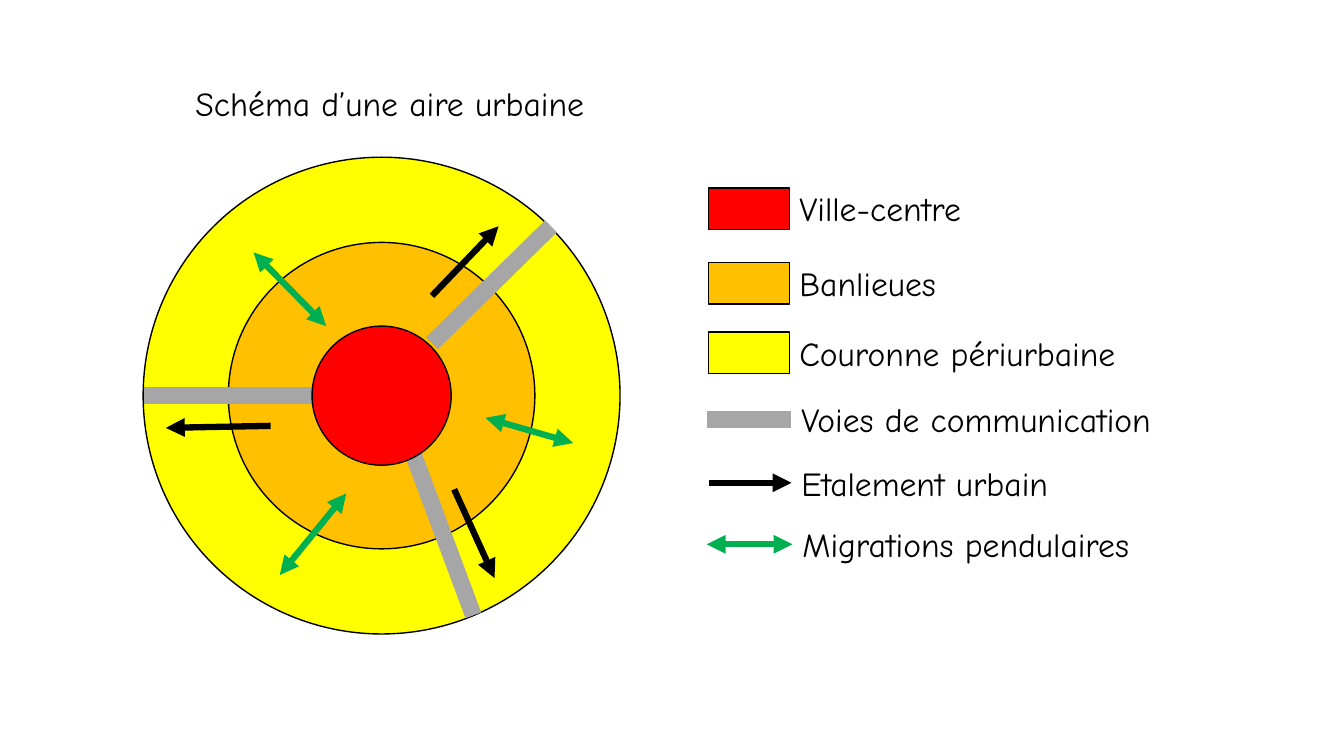
from lxml import etree
from pptx import Presentation
from pptx.dml.color import RGBColor
from pptx.enum.shapes import MSO_CONNECTOR, MSO_SHAPE
from pptx.enum.text import MSO_AUTO_SIZE, PP_ALIGN
from pptx.oxml.ns import qn
from pptx.util import Inches, Pt

ELLIPSE = MSO_SHAPE.OVAL
RECTANGLE = MSO_SHAPE.RECTANGLE
STRAIGHT = MSO_CONNECTOR.STRAIGHT
FIT_SHAPE = MSO_AUTO_SIZE.SHAPE_TO_FIT_TEXT
LEFT, CENTER = PP_ALIGN.LEFT, PP_ALIGN.CENTER

FONT = "Comic Neue"
BLACK = "000000"
CITY, SUBURBS, PERIURBAN = "FF0000", "FFC000", "FFFF00"
LABEL_HEIGHT = 0.5

ROAD = {"color": "A6A6A6", "width": 12}
SPRAWL = {"color": BLACK, "width": 4.5, "ends": ("tailEnd",)}
COMMUTE = {"color": "00B050", "width": 4.5, "ends": ("headEnd", "tailEnd")}

# Line ends are offsets in inches from the centre of the circles.
ROADS = [(0.5, -0.52, 1.68, -1.68), (-2.36, 0, -0.68, 0), (0.91, 2.18, 0.31, 0.57)]
SPRAWL_ARROWS = [(0.5, -0.99, 1.16, -1.68), (0.72, 0.93, 1.12, 1.81),
                 (-1.1, 0.3, -2.14, 0.32)]
COMMUTE_ARROWS = [(1.03, 0.22, 1.9, 0.47), (-1.27, -1.42, -0.55, -0.69),
                  (-0.35, 0.97, -1.01, 1.78)]

# Label, colour, row centre below the legend top, label width.
AREA_ROWS = [
    ("Ville-centre", CITY, 0.25, 2.45),
    ("Banlieues", SUBURBS, 0.99, 2.45),
    ("Couronne périurbaine", PERIURBAN, 1.68, 3.83),
]
# Label, line style, row centre below the legend top, line start and end.
LINE_ROWS = [
    ("Voies de communication", ROAD, 2.34, 0, 0.84),
    ("Etalement urbain", SPRAWL, 2.97, 0.02, 0.84),
    ("Migrations pendulaires", COMMUTE, 3.58, 0, 0.85),
]


def rgb(color):
    return RGBColor.from_string(color)


def add_area(slide, kind, left, top, width, height, color):
    shape = slide.shapes.add_shape(
        kind, Inches(left), Inches(top), Inches(width), Inches(height))
    shape.shadow.inherit = False
    shape.fill.solid()
    shape.fill.fore_color.rgb = rgb(color)
    shape.line.color.rgb = rgb(BLACK)
    shape.line.width = Pt(1)


def add_line(slide, start_x, start_y, end_x, end_y, color, width, ends=()):
    """Draw a straight line with a triangle at each of the named ends."""
    connector = slide.shapes.add_connector(
        STRAIGHT, Inches(start_x), Inches(start_y), Inches(end_x), Inches(end_y))
    connector.line.color.rgb = rgb(color)
    connector.line.width = Pt(width)
    properties = connector._element.spPr
    outline = properties.find(qn("a:ln"))
    for end in ends:
        etree.SubElement(outline, qn(f"a:{end}"), type="triangle")
    etree.SubElement(properties, qn("a:effectLst"))


def add_label(slide, text, left, top, width, size=24, align=LEFT):
    box = slide.shapes.add_textbox(
        Inches(left), Inches(top), Inches(width), Inches(LABEL_HEIGHT))
    box.text_frame.word_wrap = True
    box.text_frame.auto_size = FIT_SHAPE
    paragraph = box.text_frame.paragraphs[0]
    paragraph.alignment = align
    run = paragraph.add_run()
    run.text = text
    run.font.name = FONT
    run.font.size = Pt(size)
    run.font.color.rgb = rgb(BLACK)


def add_diagram(slide, left, top, size):
    """Draw the urban area as concentric circles in a square box."""
    center_x, center_y = left + size / 2, top + size / 2

    def add_circle(diameter, color):
        add_area(slide, ELLIPSE, center_x - diameter / 2, center_y - diameter / 2,
                 diameter, diameter, color)

    def add_lines(lines, style):
        for start_x, start_y, end_x, end_y in lines:
            add_line(slide, center_x + start_x, center_y + start_y,
                     center_x + end_x, center_y + end_y, **style)

    add_circle(size, PERIURBAN)
    add_circle(3.04, SUBURBS)
    add_lines(ROADS, ROAD)
    add_circle(1.38, CITY)
    add_lines(SPRAWL_ARROWS, SPRAWL)
    add_lines(COMMUTE_ARROWS, COMMUTE)


def add_legend(slide, left, top):
    swatch_width, swatch_height, indent = 0.8, 0.41, 0.02
    for text, color, center, label_width in AREA_ROWS:
        middle = top + center
        add_area(slide, RECTANGLE, left + indent, middle - swatch_height / 2,
                 swatch_width, swatch_height, color)
        add_label(slide, text, left + indent + swatch_width,
                  middle - LABEL_HEIGHT / 2, label_width)
    for text, style, center, start, end in LINE_ROWS:
        middle = top + center
        add_line(slide, left + start, middle, left + end, middle, **style)
        add_label(slide, text, left + end, middle - LABEL_HEIGHT / 2, 4.15)


def main():
    presentation = Presentation()
    presentation.slide_width = Inches(13.33)
    presentation.slide_height = Inches(7.5)
    slide = presentation.slides.add_slide(presentation.slide_layouts[6])
    add_diagram(slide, 1.42, 1.56, 4.73)
    add_legend(slide, 7.01, 1.82)
    add_label(slide, "Schéma d’une aire urbaine", 1.5, 0.77, 4.73, align=CENTER)
    presentation.save("out.pptx")


if __name__ == "__main__":
    main()
